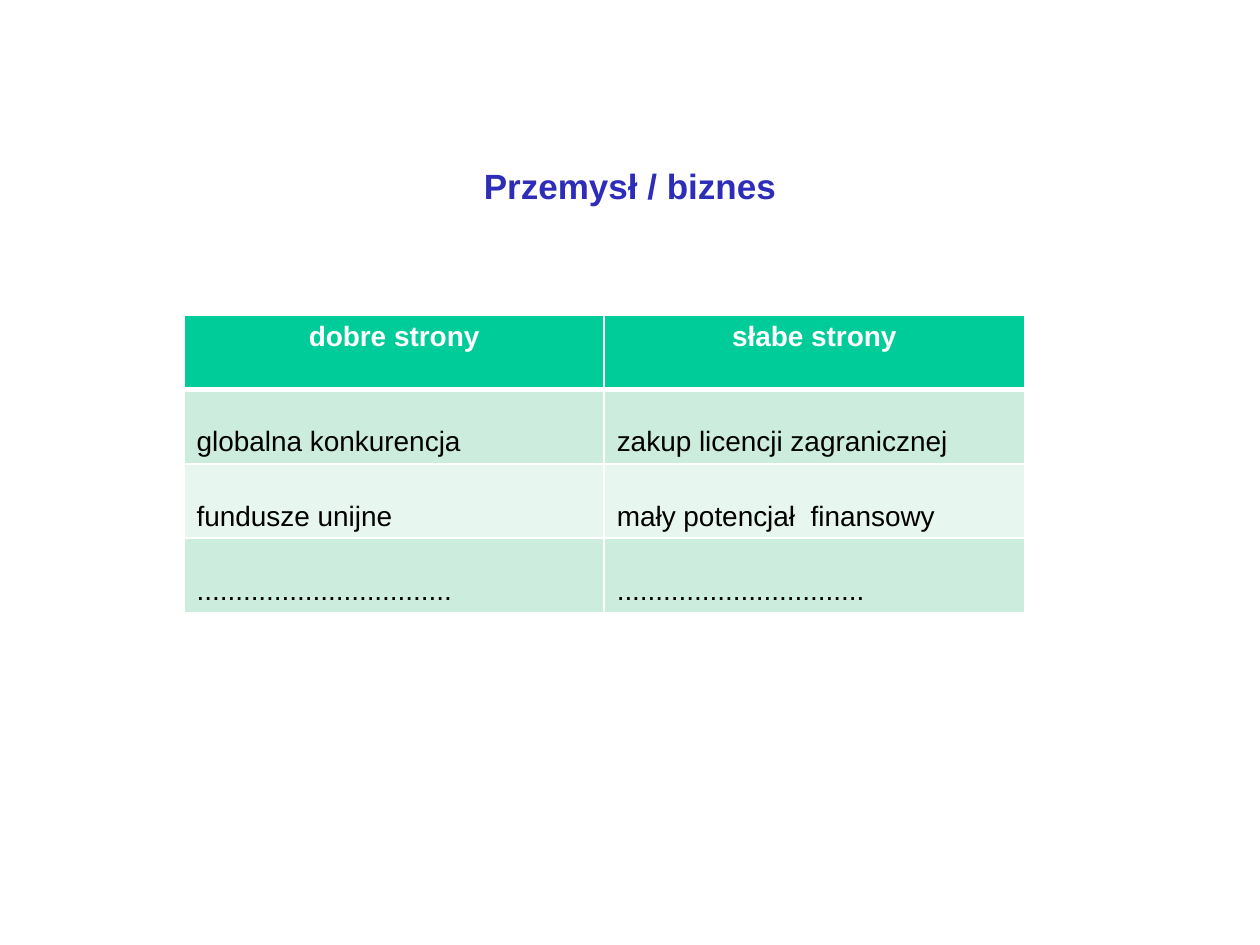
from pptx import Presentation, util as u
from pptx.dml.color import RGBColor
from pptx.enum import text
from pptx.oxml import parse_xml
from pptx.oxml.ns import nsdecls

TITLE = "Przemysł / biznes"
ROWS = [
    ("dobre strony", "słabe strony"),
    ("globalna konkurencja", "zakup licencji zagranicznej"),
    ("fundusze unijne", "mały potencjał  finansowy"),
    ("." * 33, "." * 32),
]
HEAD, BANDS = "00CC99", ("CCECDE", "E7F6EF")
LEFT, TOP, COL, ROW = 3.71, 6.35, 8.47, 1.5


def write(frame, words, size, tint, bold, align):
    par = frame.paragraphs[0]
    par.alignment = align
    run = par.add_run()
    run.text = words
    font = run.font
    font.name, font.size, font.bold = "Arial", u.Pt(size), bold
    font.color.rgb = RGBColor.from_string(tint)


def edge(cell, sides):
    props = cell._tc.get_or_add_tcPr()
    for spot, (side, width) in enumerate(sides.items()):
        props.insert(spot, parse_xml(
            f'<a:ln{side} {nsdecls("a")} w="{u.Pt(width)}"><a:solidFill>'
            f'<a:srgbClr val="FFFFFF"/></a:solidFill></a:ln{side}>'))


def main():
    """Build the slide with its title and table of strong and weak sides."""
    deck = Presentation()
    deck.slide_width, deck.slide_height = u.Cm(25.4), u.Cm(19.05)
    slide = deck.slides.add_slide(deck.slide_layouts[5])

    title = slide.shapes.title
    title.left, title.top = u.Cm(1.9), u.Cm(3.12)
    title.width, title.height = u.Cm(21.6), u.Cm(1.4)
    frame = title.text_frame
    frame.auto_size = text.MSO_AUTO_SIZE.NONE
    frame.vertical_anchor = text.MSO_ANCHOR.TOP
    frame.margin_top = u.Cm(0.2)
    write(frame, TITLE, 20, "2D2DB9", True, text.PP_ALIGN.CENTER)

    count = len(ROWS)
    table = slide.shapes.add_table(
        count, 2, u.Cm(LEFT), u.Cm(TOP), u.Cm(2 * COL), u.Cm(count * ROW)).table
    for col in table.columns:
        col.width = u.Cm(COL)
    for r, row in enumerate(ROWS):
        head = r == 0
        for c, words in enumerate(row):
            cell = table.cell(r, c)
            cell.fill.solid()
            shade = HEAD if head else BANDS[(r - 1) % 2]
            cell.fill.fore_color.rgb = RGBColor.from_string(shade)
            cell.vertical_anchor = text.MSO_ANCHOR.TOP if head else text.MSO_ANCHOR.BOTTOM
            edge(cell, {"L": 1, "R": 1, "T": 3 if r == 1 else 1, "B": 3 if head else 1})
            write(cell.text_frame, words, 16, "FFFFFF" if head else "000000", head,
                  text.PP_ALIGN.CENTER if head else text.PP_ALIGN.LEFT)
    deck.save("out.pptx")


if __name__ == "__main__":
    main()
